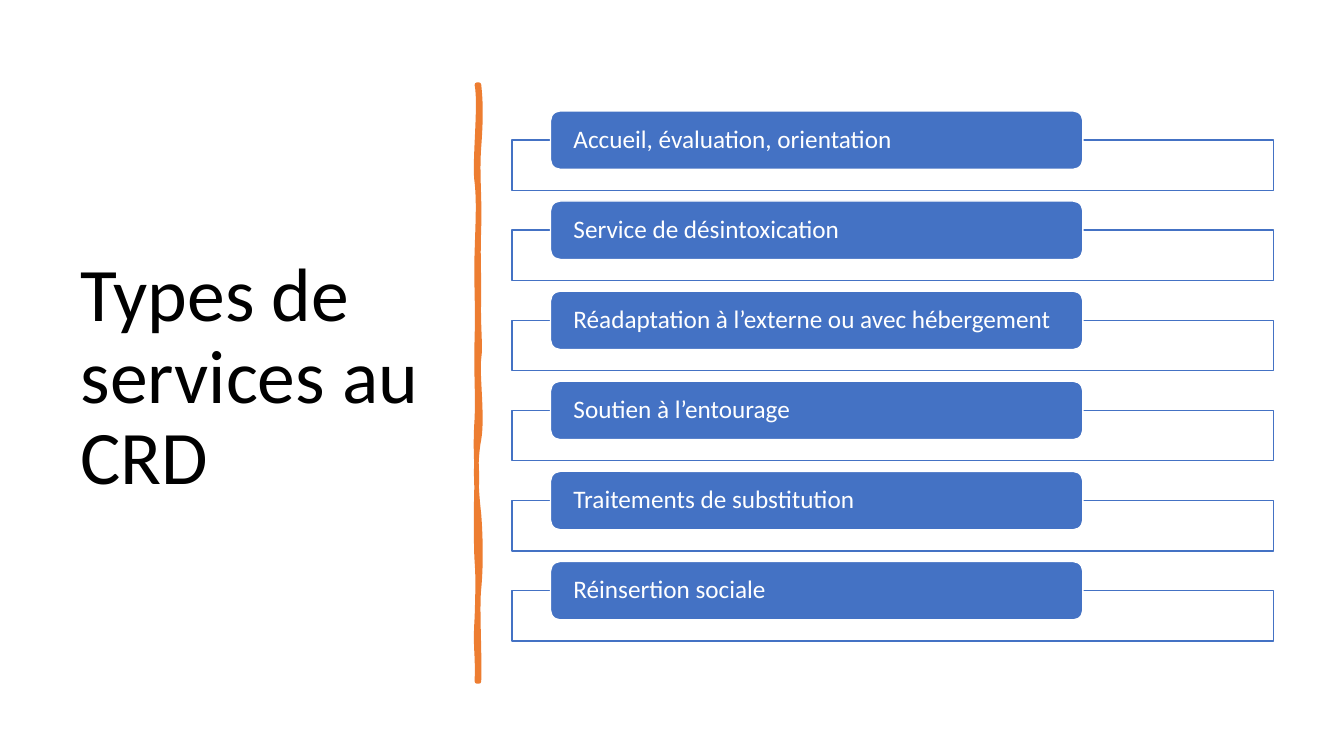
from pptx import Presentation
from pptx.dml.color import RGBColor
from pptx.enum.shapes import MSO_SHAPE
from pptx.enum.text import MSO_ANCHOR, PP_ALIGN
from pptx.oxml.ns import qn
from pptx.util import Inches, Pt
from lxml.etree import SubElement

BLUE = RGBColor(0x44, 0x72, 0xC4)
ORANGE = RGBColor(0xED, 0x7D, 0x31)
WHITE = RGBColor(0xFF, 0xFF, 0xFF)
BLACK = RGBColor(0, 0, 0)

TITLE = "Types de services au CRD"
SERVICES = [
    "Accueil, évaluation, orientation",
    "Service de désintoxication",
    "Réadaptation à l’externe ou avec hébergement",
    "Soutien à l’entourage",
    "Traitements de substitution",
    "Réinsertion sociale",
]

# Rows of the service list, in inches
FIRST_TOP, LAST_TOP = 1.1, 5.57
ROW_PITCH = (LAST_TOP - FIRST_TOP) / (len(SERVICES) - 1)
FRAME_DROP = 0.29

# Hand-drawn divider, in hundredths of an inch:
# two control points and an end point per curve
STROKE_START = (475, 84)
STROKE_CURVES = [
    # Right edge, downwards
    ((477, 102), (477, 119), (475, 146)),
    ((473, 173), (476, 195), (475, 226)),
    ((474, 257), (475, 262), (475, 294)),
    ((474, 325), (477, 342), (475, 356)),
    ((473, 370), (479, 414), (475, 436)),
    ((471, 457), (472, 484), (475, 510)),
    ((477, 536), (477, 564), (475, 584)),
    ((473, 603), (476, 650), (475, 676)),
    ((474, 676), (473, 676), (473, 676)),
    # Left edge, upwards
    ((474, 646), (471, 644), (473, 613)),
    ((474, 583), (474, 570), (473, 557)),
    ((472, 544), (472, 495), (473, 477)),
    ((473, 459), (471, 445), (473, 415)),
    ((474, 386), (472, 373), (473, 335)),
    ((474, 298), (472, 281), (473, 250)),
    ((474, 218), (475, 200), (473, 181)),
    ((470, 163), (477, 104), (473, 84)),
    ((474, 84), (474, 84), (475, 84)),
]


def paint(shape, fill, line, width):
    shape.shadow.inherit = False
    shape.fill.solid()
    shape.fill.fore_color.rgb = fill
    shape.line.color.rgb = line
    shape.line.width = Pt(width)


def write(shape, text, size, color, inset):
    frame = shape.text_frame
    frame.word_wrap = True
    frame.vertical_anchor = MSO_ANCHOR.MIDDLE
    frame.margin_left = frame.margin_right = Inches(inset)
    frame.margin_top = frame.margin_bottom = 0
    paragraph = frame.paragraphs[0]
    paragraph.text = text
    paragraph.alignment = PP_ALIGN.LEFT
    paragraph.line_spacing = 0.9
    paragraph.font.name = "Calibri"
    paragraph.font.size = Pt(size)
    paragraph.font.color.rgb = color


def bend_segments(outline):
    """Turn each three straight segments of the outline into one curve."""
    segments = list(outline.iter(qn("a:lnTo")))
    for first in range(0, len(segments), 3):
        curve = segments[first].makeelement(qn("a:cubicBezTo"))
        segments[first].addprevious(curve)
        for segment in segments[first:first + 3]:
            curve.append(segment[0])
            segment.getparent().remove(segment)


def add_divider(slide):
    points = [point for curve in STROKE_CURVES for point in curve]
    builder = slide.shapes.build_freeform(*STROKE_START, scale=Inches(0.01))
    builder.add_line_segments(points, close=True)
    divider = builder.convert_to_shape()
    bend_segments(divider.element)
    paint(divider, ORANGE, ORANGE, 3.25)
    SubElement(divider.element.spPr.find(qn("a:ln")), qn("a:round"))


def add_box(slide, preset, left, top, width, height):
    return slide.shapes.add_shape(
        preset, Inches(left), Inches(top), Inches(width), Inches(height))


def add_service(slide, row, service):
    top = FIRST_TOP + row * ROW_PITCH
    frame = add_box(slide, MSO_SHAPE.RECTANGLE, 5.08, top + FRAME_DROP, 7.55, 0.5)
    paint(frame, WHITE, BLUE, 1)
    # Frame fill is 90 % opaque
    fill_color = frame.element.spPr.find(qn("a:solidFill"))[0]
    SubElement(fill_color, qn("a:alpha"), val="90000")

    label = add_box(slide, MSO_SHAPE.ROUNDED_RECTANGLE, 5.46, top, 5.28, 0.58)
    paint(label, BLUE, WHITE, 1)
    write(label, service, 18, WHITE, 0.2)


def add_title(slide):
    title = slide.shapes.add_textbox(
        Inches(0.7), Inches(0.7), Inches(3.74), Inches(6.11))
    write(title, TITLE, 54, BLACK, 0.1)


def main():
    deck = Presentation()
    deck.slide_width, deck.slide_height = Inches(13.33), Inches(7.5)
    slide = deck.slides.add_slide(deck.slide_layouts[6])
    add_title(slide)
    add_divider(slide)
    for row, service in enumerate(SERVICES):
        add_service(slide, row, service)
    deck.save("out.pptx")


if __name__ == "__main__":
    main()
